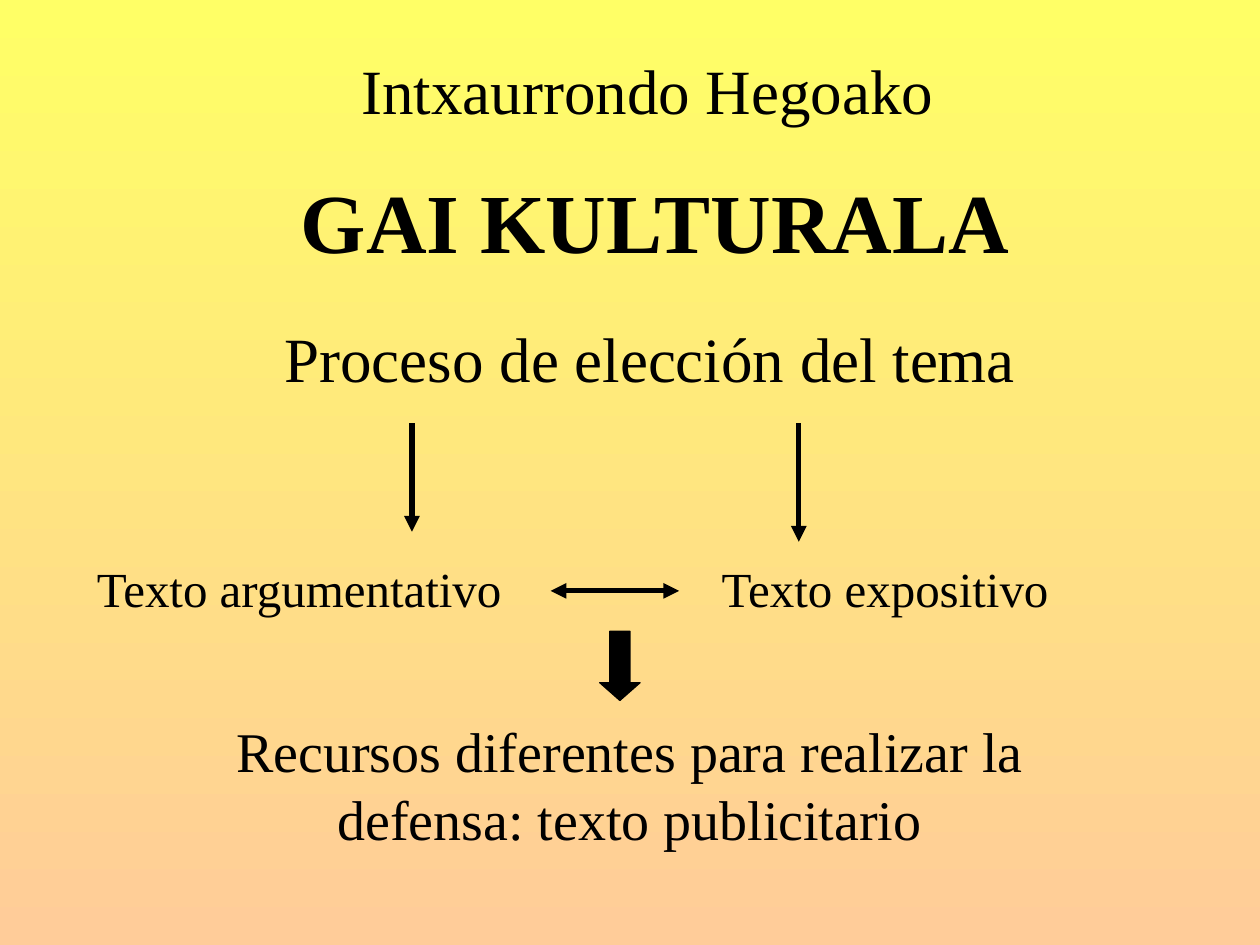
from lxml.etree import SubElement
from pptx import Presentation
from pptx.dml.color import RGBColor
from pptx.enum.shapes import MSO_CONNECTOR, MSO_SHAPE
from pptx.enum.text import MSO_AUTO_SIZE, PP_ALIGN
from pptx.oxml.ns import qn
from pptx.util import Inches, Pt

COLORS = {"ink": "000000", "top": "FFFF66", "bottom": "FFCC99"}
FONT = "Times New Roman"

presentation = Presentation()
presentation.slide_width = Inches(10)
presentation.slide_height = Inches(7.5)
slide = presentation.slides.add_slide(presentation.slide_layouts[6])
ink = RGBColor.from_string(COLORS["ink"])


def across(percent):
    return round(presentation.slide_width * percent / 100)


def down(percent):
    return round(presentation.slide_height * percent / 100)


background = slide.background.fill
background.gradient()
background.gradient_angle = 270
for stop, name, position in zip(background.gradient_stops, ("top", "bottom"), (0, 1)):
    stop.color.rgb = RGBColor.from_string(COLORS[name])
    stop.position = position

center, left = PP_ALIGN.CENTER, PP_ALIGN.LEFT
text_row = 58.4
text_boxes = [
    (20.1, 4.8, 63.8, 25.33, center,
     [("Intxaurrondo Hegoako ", 36, False), ("GAI KULTURALA", 48, True)]),
    (21.6, 33.2, 64.6, 9.33, left, [("Proceso de elección del tema", 36, False)]),
    (56.3, text_row, 38.6, 7.6, left, [("Texto expositivo", 28, False)]),
    (6.7, text_row, 36.2, 7.6, left, [("Texto argumentativo", 28, False)]),
    (13, 75.2, 74, 15.6, center,
     [("Recursos diferentes para realizar la defensa: texto publicitario", 32, False)]),
]
for x, y, width, height, alignment, lines in text_boxes:
    box = slide.shapes.add_textbox(across(x), down(y), across(width), down(height))
    frame = box.text_frame
    frame.word_wrap = True
    frame.auto_size = MSO_AUTO_SIZE.SHAPE_TO_FIT_TEXT
    for index, (text, size, bold) in enumerate(lines):
        paragraph = frame.add_paragraph() if index else frame.paragraphs[0]
        paragraph.alignment = alignment
        spacing = SubElement(paragraph._p.get_or_add_pPr(), qn("a:spcBef"))
        SubElement(spacing, qn("a:spcPct"), val="50000")
        run = paragraph.add_run()
        run.text = text
        run.font.name = FONT
        run.font.size = Pt(size)
        run.font.bold = bold
        run.font.color.rgb = ink

arrows = [
    (32.7, 44.8, 32.7, 56.27, ["tailEnd"]),
    (63.4, 44.8, 63.4, 57.33, ["tailEnd"]),
    (43.7, 62.53, 53.9, 62.53, ["headEnd", "tailEnd"]),
]
for x1, y1, x2, y2, ends in arrows:
    arrow = slide.shapes.add_connector(
        MSO_CONNECTOR.STRAIGHT, across(x1), down(y1), across(x2), down(y2))
    arrow.line.color.rgb = ink
    arrow.line.width = Pt(3)
    for end in ends:
        SubElement(arrow.line._get_or_add_ln(), qn(f"a:{end}"), type="triangle")
    SubElement(arrow._element.spPr, qn("a:effectLst"))

block_arrow = slide.shapes.add_shape(
    MSO_SHAPE.DOWN_ARROW, across(47.6), down(66.8), across(3.2), down(7.33))
block_arrow.adjustments[0] = 0.5
block_arrow.adjustments[1] = 0.44
block_arrow.shadow.inherit = False
block_arrow.fill.solid()
block_arrow.fill.fore_color.rgb = ink
block_arrow.line.color.rgb = ink
block_arrow.line.width = Pt(0.75)

presentation.save("out.pptx")
